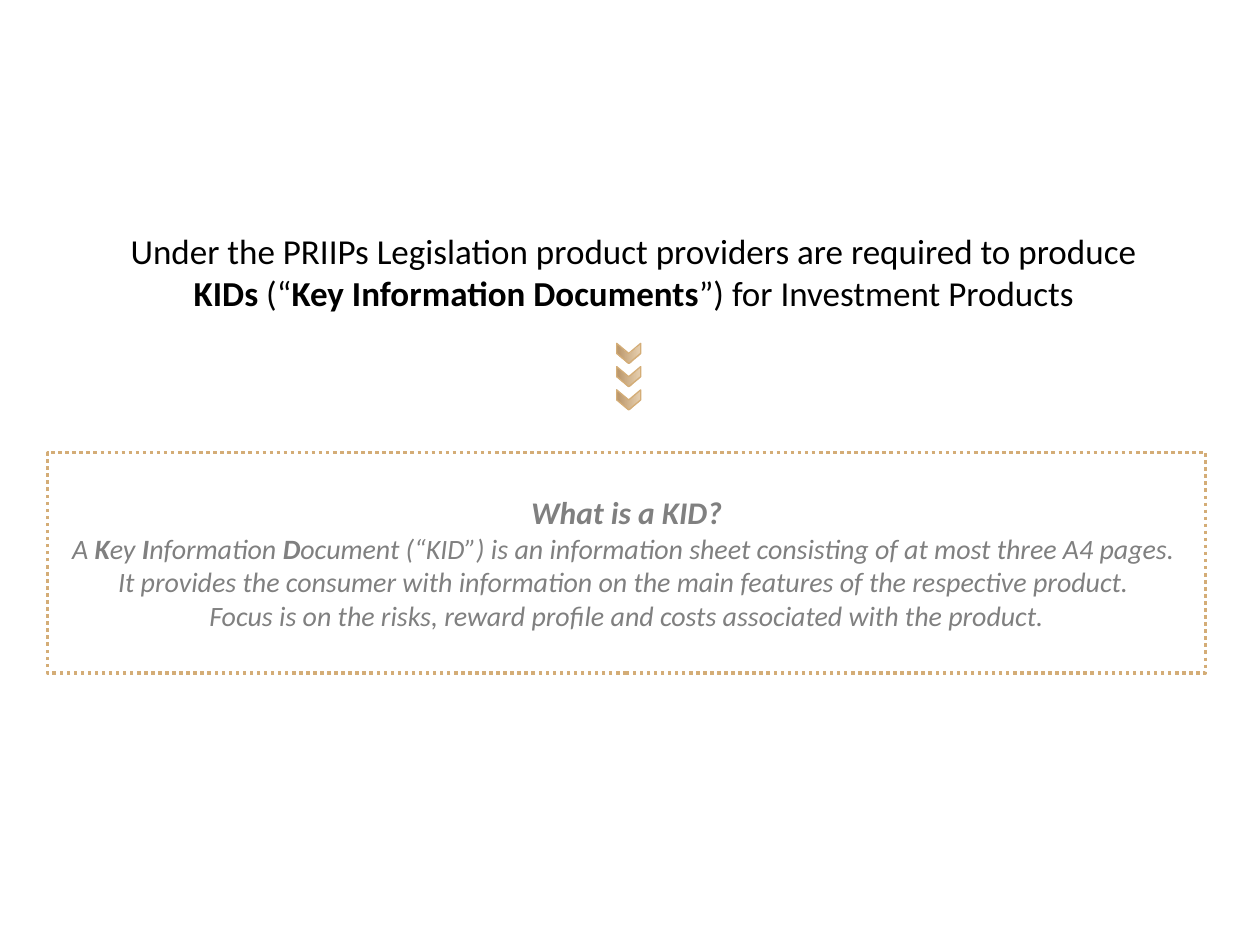
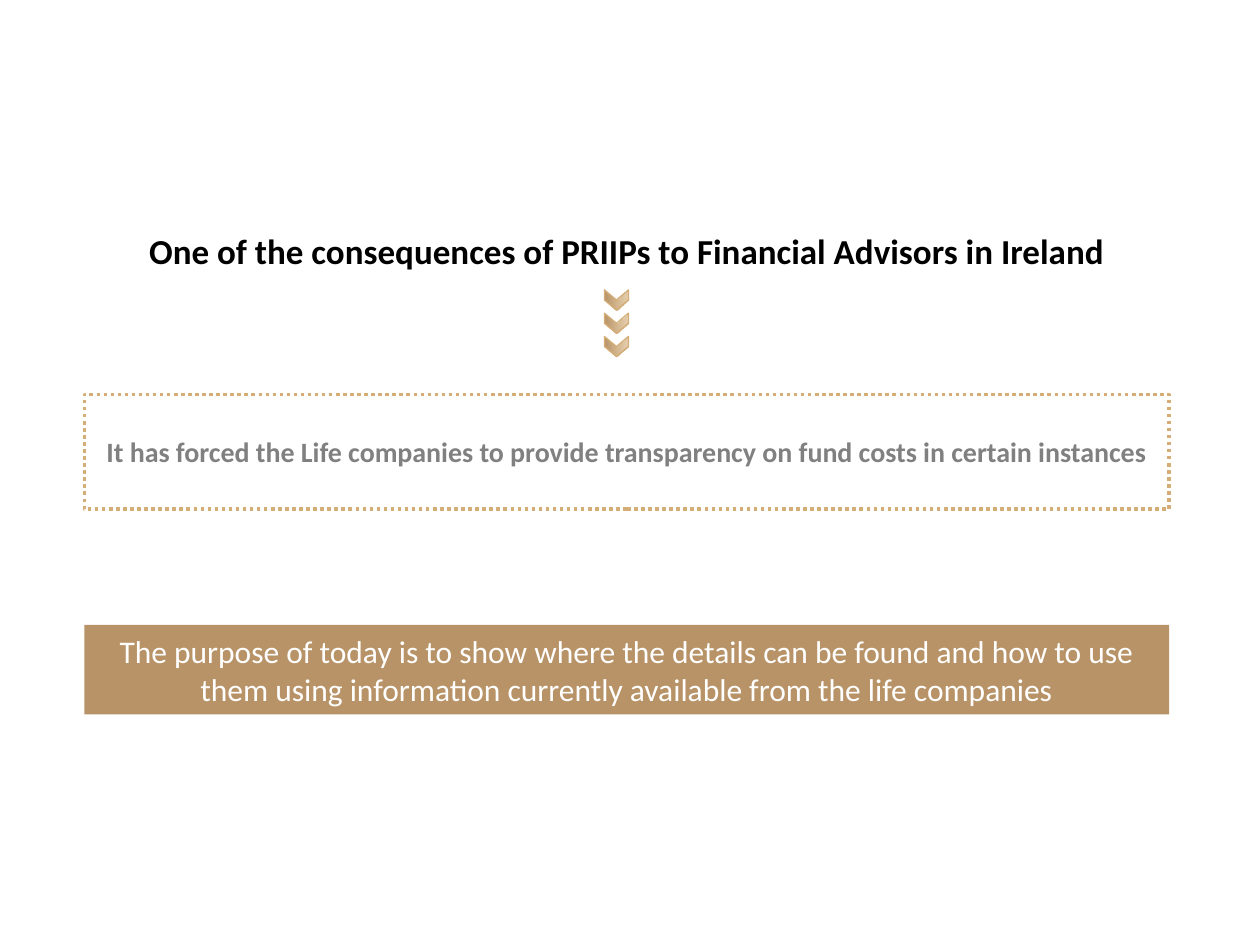
from lxml.etree import SubElement
from pptx import Presentation
from pptx.dml.color import RGBColor
from pptx.enum.dml import MSO_LINE
from pptx.enum.shapes import MSO_SHAPE
from pptx.enum.text import MSO_ANCHOR, PP_ALIGN
from pptx.oxml.ns import qn
from pptx.util import Pt

BLACK = RGBColor(0x00, 0x00, 0x00)
WHITE = RGBColor(0xFF, 0xFF, 0xFF)
GREY = RGBColor(0x80, 0x80, 0x80)
BRONZE = RGBColor(0xB8, 0x93, 0x67)
GOLD = RGBColor(0xD4, 0xAD, 0x77)


class SlideBuilder:
    font_name = "Calibri"
    title_top = 127.4
    chevron_width, chevron_height, chevron_step = 11.5, 13.7, 13.3

    def __init__(self, deck):
        self.deck = deck
        self.page = None

    def new_page(self):
        self.page = self.deck.slides.add_slide(self.deck.slide_layouts[6])

    def fill_text(self, frame, lines, color, anchor, italic=False):
        frame.vertical_anchor = anchor
        for index, (line, size) in enumerate(lines):
            para = frame.add_paragraph() if index else frame.paragraphs[0]
            para.alignment = PP_ALIGN.CENTER
            for position, piece in enumerate(line.split("*")):
                if not piece:
                    continue
                span = para.add_run()
                span.text = piece
                span.font.name = self.font_name
                span.font.size = Pt(size)
                span.font.color.rgb = color
                span.font.bold = position % 2 == 1
                span.font.italic = italic

    def title(self, left, width, height, *lines):
        box = self.page.shapes.add_textbox(Pt(left), Pt(self.title_top), Pt(width), Pt(height))
        box.text_frame.word_wrap = True
        self.fill_text(box.text_frame, [(line, 20) for line in lines], BLACK, MSO_ANCHOR.TOP)

    def rectangle(self, left, top, width, height):
        box = self.page.shapes.add_shape(
            MSO_SHAPE.RECTANGLE, Pt(left), Pt(top), Pt(width), Pt(height))
        box.shadow.inherit = False
        return box

    def dotted_box(self, left, top, width, height, lines, italic=False):
        box = self.rectangle(left, top, width, height)
        box.fill.background()
        box.line.color.rgb = GOLD
        box.line.width = Pt(2)
        box.line.dash_style = MSO_LINE.ROUND_DOT
        box.text_frame.word_wrap = False
        self.fill_text(box.text_frame, lines, GREY, MSO_ANCHOR.MIDDLE, italic)

    def banner(self, left, top, width, height, line):
        box = self.rectangle(left, top, width, height)
        box.fill.solid()
        box.fill.fore_color.rgb = BRONZE
        box.line.fill.background()
        box.text_frame.word_wrap = True
        self.fill_text(box.text_frame, [(line, 18)], WHITE, MSO_ANCHOR.MIDDLE)

    def chevrons(self, left, top, count=3):
        group = self.page.shapes.add_group_shape()
        for index in range(count):
            chevron = group.shapes.add_shape(
                MSO_SHAPE.CHEVRON, Pt(left), Pt(top + index * self.chevron_step),
                Pt(self.chevron_width), Pt(self.chevron_height))
            chevron.rotation = 90
            chevron.shadow.inherit = False
            chevron.line.color.rgb = GOLD
            chevron.line.width = Pt(0.75)
            self.fade(chevron)

    def fade(self, shape):
        shape.fill.gradient()
        shape.fill.gradient_angle = 0
        for stop, color in zip(shape.fill.gradient_stops, (BRONZE, GOLD)):
            stop.color.rgb = color
        gradient = shape.element.spPr.find(qn("a:gradFill"))
        gradient.set("rotWithShape", "0")
        last_color = gradient.findall(".//" + qn("a:srgbClr"))[-1]
        SubElement(last_color, qn("a:alpha")).set("val", "57000")


def main():
    deck = Presentation()
    deck.slide_width, deck.slide_height = Pt(720), Pt(540)
    builder = SlideBuilder(deck)

    builder.new_page()
    builder.title(
        28.1, 668.2, 55.4,
        "Under the PRIIPs Legislation product providers are required to produce",
        "*KIDs* (“*Key Information Documents*”) for Investment Products")
    builder.dotted_box(27.2, 258.5, 661.7, 126, [
        ("*What is a KID?*", 18),
        ("A *K*ey *I*nformation *D*ocument (“KID”) is an information sheet "
         "consisting of at most three A4 pages. ", 16),
        ("It provides the consumer with information on the main features "
         "of the respective product. ", 16),
        ("Focus is on the risks, reward profile and costs associated with the product.", 16),
    ], italic=True)
    builder.chevrons(353.5, 195.1)

    builder.new_page()
    builder.title(36.7, 643, 31.7,
                  "*One of the consequences of PRIIPs to Financial Advisors in Ireland*")
    builder.dotted_box(48.2, 225.4, 619.9, 65.5, [
        ("*It has forced the Life companies to provide transparency "
         "on fund costs in certain instances*", 16)])
    builder.chevrons(346.5, 164.6)
    builder.banner(48.2, 357.1, 619.9, 51.1,
                   "The purpose of today is to show where the details can be found and how to use "
                   "them using information currently available from the life companies")

    deck.save("out.pptx")


if __name__ == "__main__":
    main()
